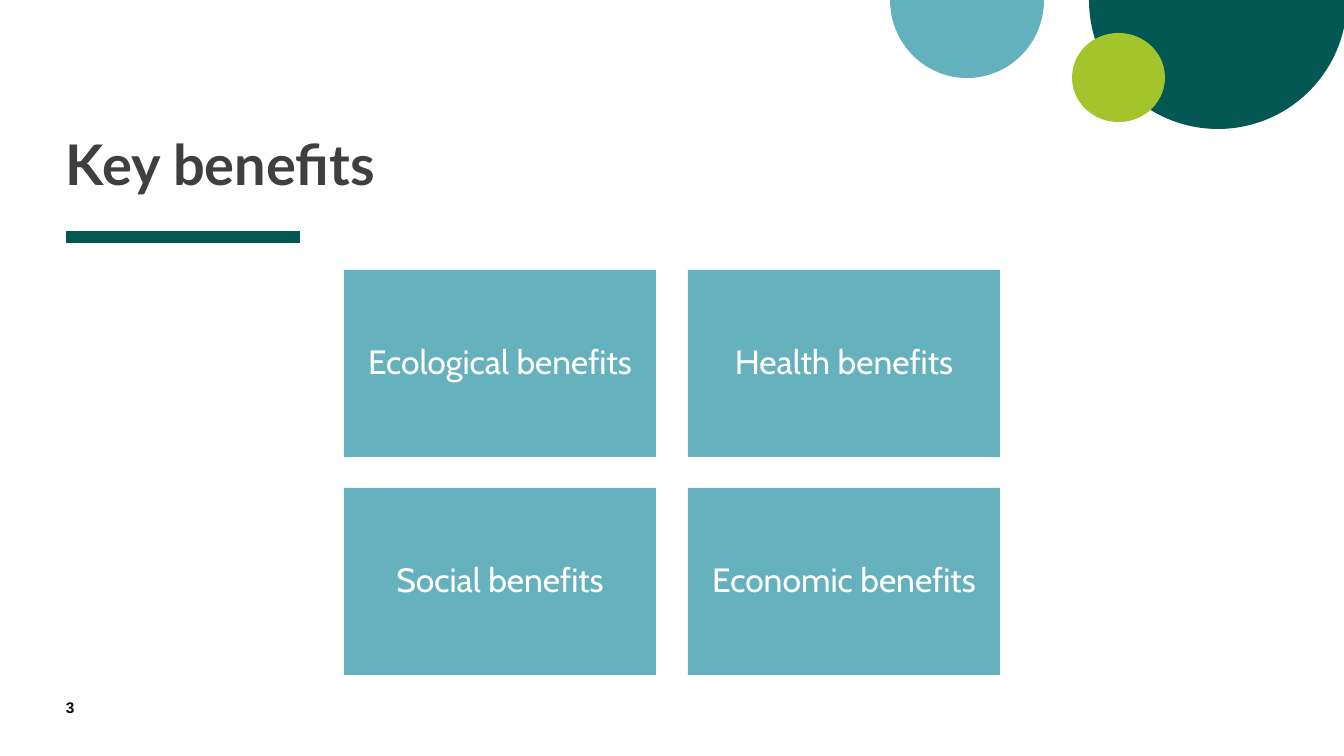
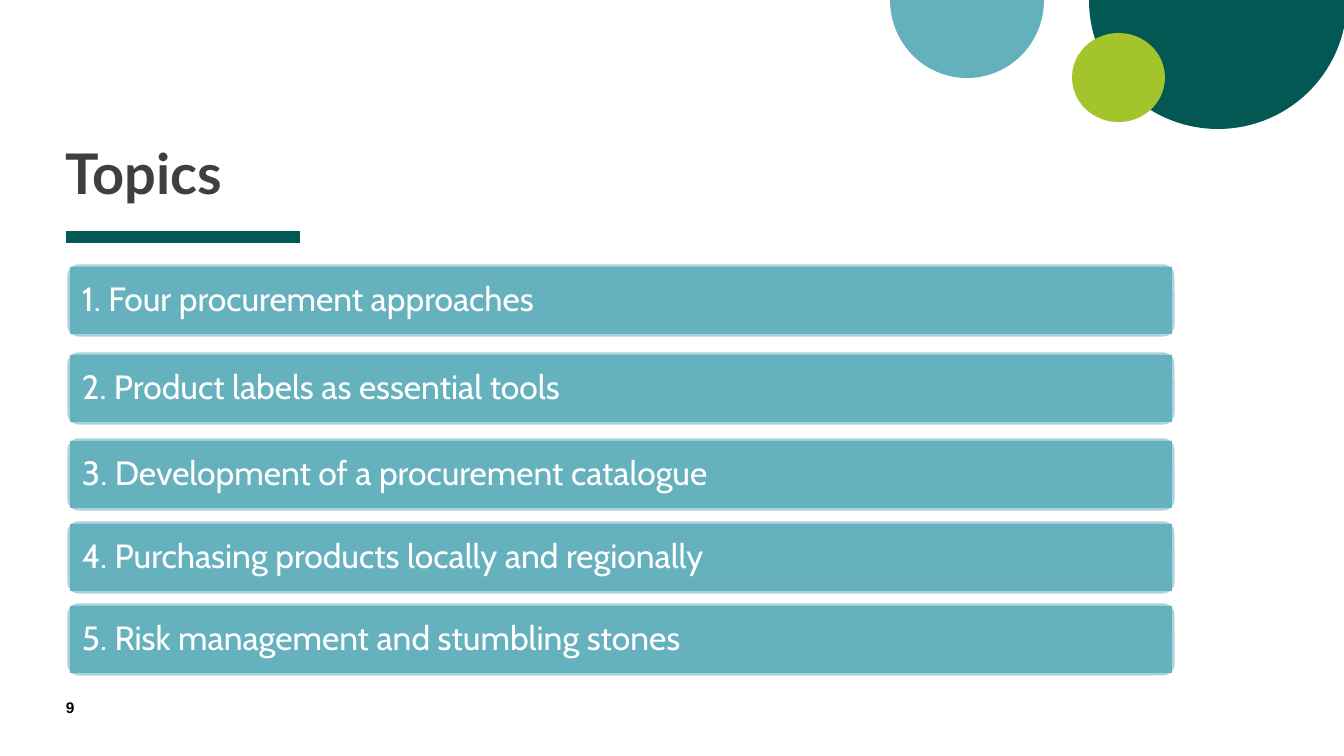
from lxml import etree
from pptx import Presentation
from pptx import util as u
from pptx.dml.color import RGBColor
from pptx.enum import shapes, text
from pptx.oxml.ns import qn

# Content
BENEFITS = ["Ecological benefits", "Health benefits", "Social benefits", "Economic benefits"]
TOPICS = [  # top edge, wording
    (263, "1. Four procurement approaches"),
    (351, "2. Product labels as essential tools"),
    (437, "3. Development of a procurement catalogue"),
    (520, "4. Purchasing products locally and regionally"),
    (602, "5. Risk management and stumbling stones"),
]

# Shared look
WIDTH, HEIGHT, MARGIN = 1344, 756, 66
GREEN, TEAL, LIME, PALE = "035854", "65B1BE", "A3C42A", "A7D3DA"
WHITE, BLACK, TITLE_GREY = "FFFFFF", "000000", "3F3F3F"
HALF_TURN = 108  # 180 degrees, as a pie adjustment
DISCS = [  # preset, box, colour
    (shapes.MSO_SHAPE.PIE, (1089, -129, 258, 258), GREEN),
    (shapes.MSO_SHAPE.PIE, (890, -78, 154, 156), "64B1BE"),
    (shapes.MSO_SHAPE.OVAL, (1072, 33, 93, 89), LIME),
]
RULE_Y, RULE_LENGTH = 237, 234


def px(length):
    return u.Emu(round(length * 914400 / 100.8))


def colour(code):
    return RGBColor.from_string(code)


def add_block(slide, preset, box, fill, outline=None):
    block = slide.shapes.add_shape(preset, *map(px, box))
    block.shadow.inherit = False
    block.fill.solid()
    block.fill.fore_color.rgb = colour(fill)
    if outline:
        block.line.color.rgb = colour(outline)
        block.line.width = u.Pt(2)
    else:
        block.line.fill.background()
    return block


def write(shape, wording, font, size, code, bold=False, align=text.PP_ALIGN.LEFT,
          anchor=text.MSO_ANCHOR.MIDDLE, inset=0, spacing=1.0):
    frame = shape.text_frame
    frame.word_wrap = True
    frame.auto_size = text.MSO_AUTO_SIZE.NONE
    frame.vertical_anchor = anchor
    frame.margin_left = frame.margin_right = px(inset)
    frame.margin_top = frame.margin_bottom = px(inset)
    paragraph = frame.paragraphs[0]
    paragraph.alignment = align
    paragraph.line_spacing = spacing
    run = paragraph.add_run()
    run.text = wording
    run.font.name, run.font.size, run.font.bold = font, u.Pt(size), bold
    run.font.color.rgb = colour(code)


def write_label(block, wording, align):
    write(block, wording, "Cabin", 24, WHITE, align=align, inset=12, spacing=0.9)


def decorate(slide):
    """Draw the corner discs and the title rule, then hand them to the layout."""
    parts = []
    for preset, box, fill in DISCS:
        disc = add_block(slide, preset, box, fill)
        if preset == shapes.MSO_SHAPE.PIE:
            disc.adjustments[0], disc.adjustments[1] = 0, HALF_TURN
        parts.append(disc)
    rule = slide.shapes.add_connector(
        shapes.MSO_CONNECTOR.STRAIGHT,
        px(MARGIN), px(RULE_Y), px(MARGIN + RULE_LENGTH), px(RULE_Y))
    rule.line.color.rgb = colour(GREEN)
    rule.line.width = u.Pt(8)
    etree.SubElement(rule.element.spPr, qn("a:effectLst"))
    parts.append(rule)
    for part in parts:
        slide.slide_layout.shapes.element.append(part.element)


def add_slide(deck, layout, title, title_box, number):
    slide = deck.slides.add_slide(layout)
    heading = slide.shapes.title
    heading.left, heading.top, heading.width, heading.height = map(px, title_box)
    write(heading, title, "Lato", 40, TITLE_GREY, bold=True,
          anchor=text.MSO_ANCHOR.BOTTOM, spacing=0.8)
    page = slide.shapes.add_textbox(*map(px, (MARGIN, 698, 57, 27)))
    write(page, number, "Arial", 11, BLACK, bold=True, anchor=text.MSO_ANCHOR.TOP)
    return slide


def add_benefits(slide):
    # Two by two grid, centred across the slide
    card_w, card_h, gap_x, gap_y, top = 312, 187, 32, 31, 270
    left = (WIDTH - 2 * card_w - gap_x) / 2
    for index, benefit in enumerate(BENEFITS):
        row, column = divmod(index, 2)
        box = (left + column * (card_w + gap_x), top + row * (card_h + gap_y), card_w, card_h)
        card = add_block(slide, shapes.MSO_SHAPE.RECTANGLE, box, TEAL)
        write_label(card, benefit, text.PP_ALIGN.CENTER)


def add_topics(slide):
    # Each bar lies on a paler rounded rim
    bar_w, bar_h, rim = 1102, 67, 4
    for top, topic in TOPICS:
        add_block(slide, shapes.MSO_SHAPE.ROUNDED_RECTANGLE,
                  (MARGIN, top, bar_w + 2 * rim, bar_h + 2 * rim), PALE, WHITE)
        bar = add_block(slide, shapes.MSO_SHAPE.RECTANGLE,
                        (MARGIN + rim, top + rim, bar_w, bar_h), TEAL)
        write_label(bar, topic, text.PP_ALIGN.LEFT)


def main():
    deck = Presentation()
    deck.slide_width, deck.slide_height = px(WIDTH), px(HEIGHT)
    layout = deck.slide_layouts[5]
    for placeholder in list(layout.placeholders):
        if placeholder.placeholder_format.type != shapes.PP_PLACEHOLDER.TITLE:
            layout.shapes.element.remove(placeholder.element)

    benefits = add_slide(deck, layout, "Key benefits", (MARGIN, 21, 748, 175), "3")
    decorate(benefits)
    add_benefits(benefits)
    topics = add_slide(deck, layout, "Topics", (MARGIN, 30, 846, 175), "9")
    add_topics(topics)
    deck.save("out.pptx")


if __name__ == "__main__":
    main()
